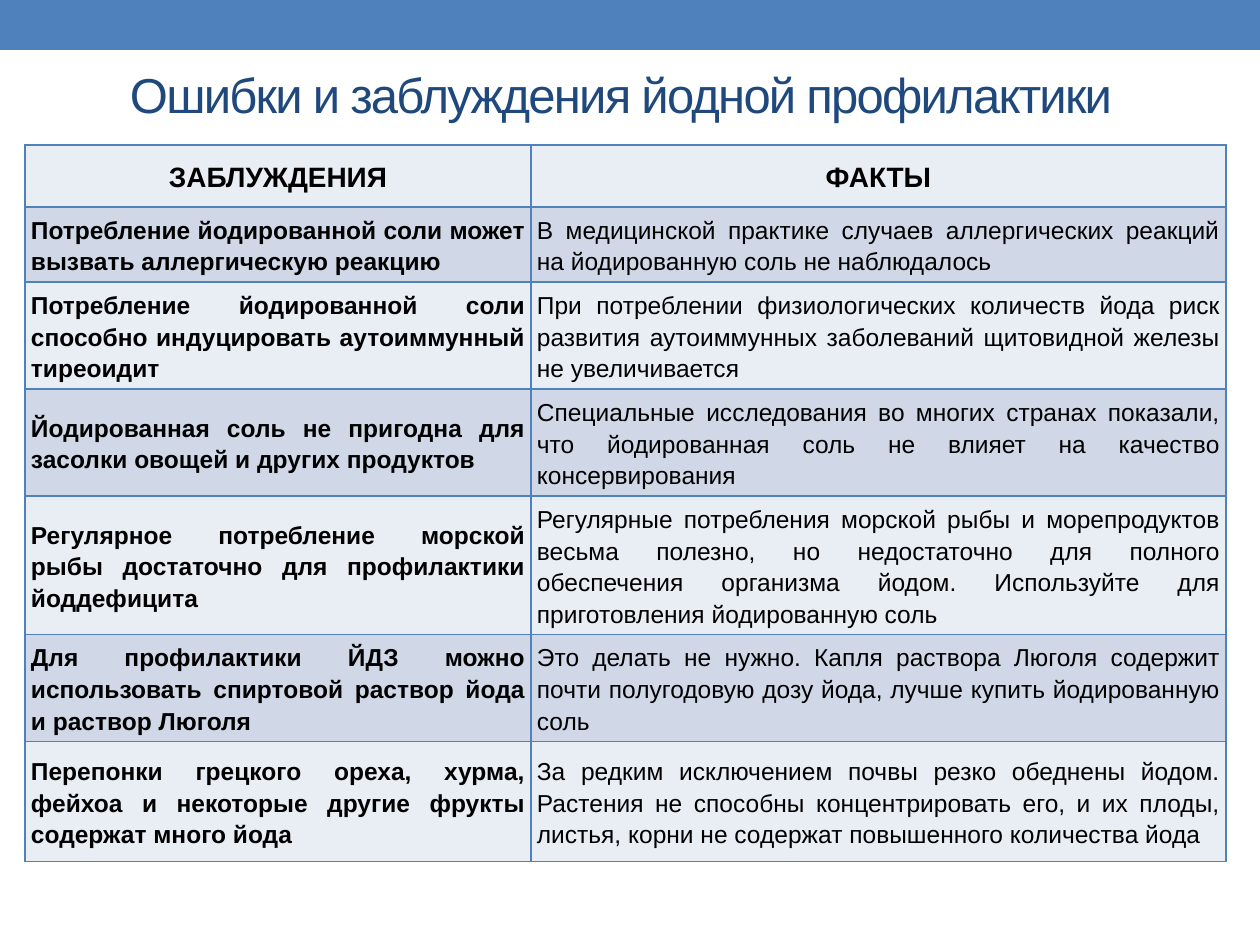
from typing import NamedTuple

import lxml.etree
import pptx
import pptx.dml.color
import pptx.enum.shapes
import pptx.enum.text
import pptx.oxml.ns
import pptx.util

EMU_PER_PX = 914400 // 126
FONT = "Arial"
COLORS = {
    "accent": "4F81BD",
    "title": "1F497D",
    "text": "000000",
    "light": "E9EDF4",
    "dark": "D0D8E8",
}
COLUMN_WIDTHS = (506, 695)
CELL_INSET = 6


class Row(NamedTuple):
    height: int
    myth: str
    fact: str


ROWS = [
    Row(62, "ЗАБЛУЖДЕНИЯ", "ФАКТЫ"),
    Row(74, "Потребление йодированной соли может вызвать аллергическую реакцию",
        "В медицинской практике случаев аллергических реакций на йодированную "
        "соль не наблюдалось"),
    Row(105, "Потребление йодированной соли способно индуцировать аутоиммунный тиреоидит",
        "При потреблении физиологических количеств йода риск развития "
        "аутоиммунных заболеваний щитовидной железы не увеличивается"),
    Row(74, "Йодированная соль не пригодна для засолки овощей и других продуктов",
        "Специальные исследования во многих странах показали, что "
        "йодированная соль не влияет на качество консервирования"),
    Row(135, "Регулярное потребление морской рыбы достаточно для профилактики йоддефицита",
        "Регулярные потребления морской рыбы и морепродуктов весьма полезно, "
        "но недостаточно для полного обеспечения организма йодом. "
        "Используйте для приготовления йодированную соль"),
    Row(89, "Для профилактики ЙДЗ можно использовать спиртовой раствор йода и раствор Люголя",
        "Это делать не нужно. Капля раствора Люголя содержит почти полугодовую "
        "дозу йода, лучше купить йодированную соль"),
    Row(120, "Перепонки грецкого ореха, хурма, фейхоа и некоторые другие фрукты "
        "содержат много йода",
        "За редким исключением почвы резко обеднены йодом. Растения не способны "
        "концентрировать его, и их плоды, листья, корни не содержат "
        "повышенного количества йода"),
]


def px(length: int) -> pptx.util.Emu:
    return pptx.util.Emu(length * EMU_PER_PX)


def color(name: str) -> pptx.dml.color.RGBColor:
    return pptx.dml.color.RGBColor.from_string(COLORS[name])


def style_font(paragraph, size: int, color_name: str, bold: bool = False) -> None:
    font = paragraph.font
    font.name = FONT
    font.size = pptx.util.Pt(size)
    font.bold = bold
    font.color.rgb = color(color_name)


def add_borders(cell) -> None:
    properties = cell._tc.get_or_add_tcPr()
    qn = pptx.oxml.ns.qn
    for side in ("lnL", "lnR", "lnT", "lnB"):
        line = lxml.etree.SubElement(properties, qn(f"a:{side}"), w=str(pptx.util.Pt(1)))
        fill = lxml.etree.SubElement(line, qn("a:solidFill"))
        lxml.etree.SubElement(fill, qn("a:srgbClr"), val=COLORS["accent"])


def fill_cell(cell, text: str, fill_name: str, header: bool, bold: bool) -> None:
    """Write and format one cell; borders must precede the fill in its XML."""
    add_borders(cell)
    cell.fill.solid()
    cell.fill.fore_color.rgb = color(fill_name)
    cell.margin_left = cell.margin_right = px(CELL_INSET)
    cell.margin_top = cell.margin_bottom = px(CELL_INSET)
    cell.vertical_anchor = pptx.enum.text.MSO_ANCHOR.MIDDLE
    cell.text = text
    paragraph = cell.text_frame.paragraphs[0]
    align = pptx.enum.text.PP_ALIGN
    paragraph.alignment = align.CENTER if header else align.JUSTIFY
    paragraph.line_spacing = 1.15
    paragraph.space_after = pptx.util.Pt(10)
    style_font(paragraph, 16 if header else 14, "text", bold)


def add_title(page, text: str):
    title = page.shapes.title
    title.left, title.top, title.width, title.height = map(px, (54, 26, 1134, 136))
    frame = title.text_frame
    frame.text = text
    frame.vertical_anchor = pptx.enum.text.MSO_ANCHOR.MIDDLE
    paragraph = frame.paragraphs[0]
    paragraph.alignment = pptx.enum.text.PP_ALIGN.CENTER
    style_font(paragraph, 28, "title")
    paragraph.runs[0].font._element.set("spc", "-100")
    return title


def add_top_bar(page, width: int):
    bar = page.shapes.add_shape(
        pptx.enum.shapes.MSO_SHAPE.RECTANGLE, 0, 0, width, px(50))
    bar.shadow.inherit = False
    bar.fill.solid()
    bar.fill.fore_color.rgb = color("accent")
    bar.line.fill.background()
    return bar


def add_myth_table(page, rows: list[Row]) -> None:
    table = page.shapes.add_table(
        len(rows), len(COLUMN_WIDTHS), px(25), px(145),
        px(sum(COLUMN_WIDTHS)), px(sum(row.height for row in rows))).table
    table.first_row = table.horz_banding = False
    for column, width in zip(table.columns, COLUMN_WIDTHS):
        column.width = px(width)
    for index, row in enumerate(rows):
        table.rows[index].height = px(row.height)
        header = index == 0
        fill_name = "dark" if index % 2 else "light"
        fill_cell(table.cell(index, 0), row.myth, fill_name, header, True)
        fill_cell(table.cell(index, 1), row.fact, fill_name, header, header)


def main() -> None:
    deck = pptx.Presentation()
    deck.slide_width = pptx.util.Inches(10)
    deck.slide_height = pptx.util.Inches(7.5)
    page = deck.slides.add_slide(deck.slide_layouts.get_by_name("Title Only"))
    title = add_title(page, "Ошибки и заблуждения йодной профилактики")
    bar = add_top_bar(page, deck.slide_width)
    title.element.addprevious(bar.element)
    add_myth_table(page, ROWS)
    deck.save("out.pptx")


if __name__ == "__main__":
    main()
